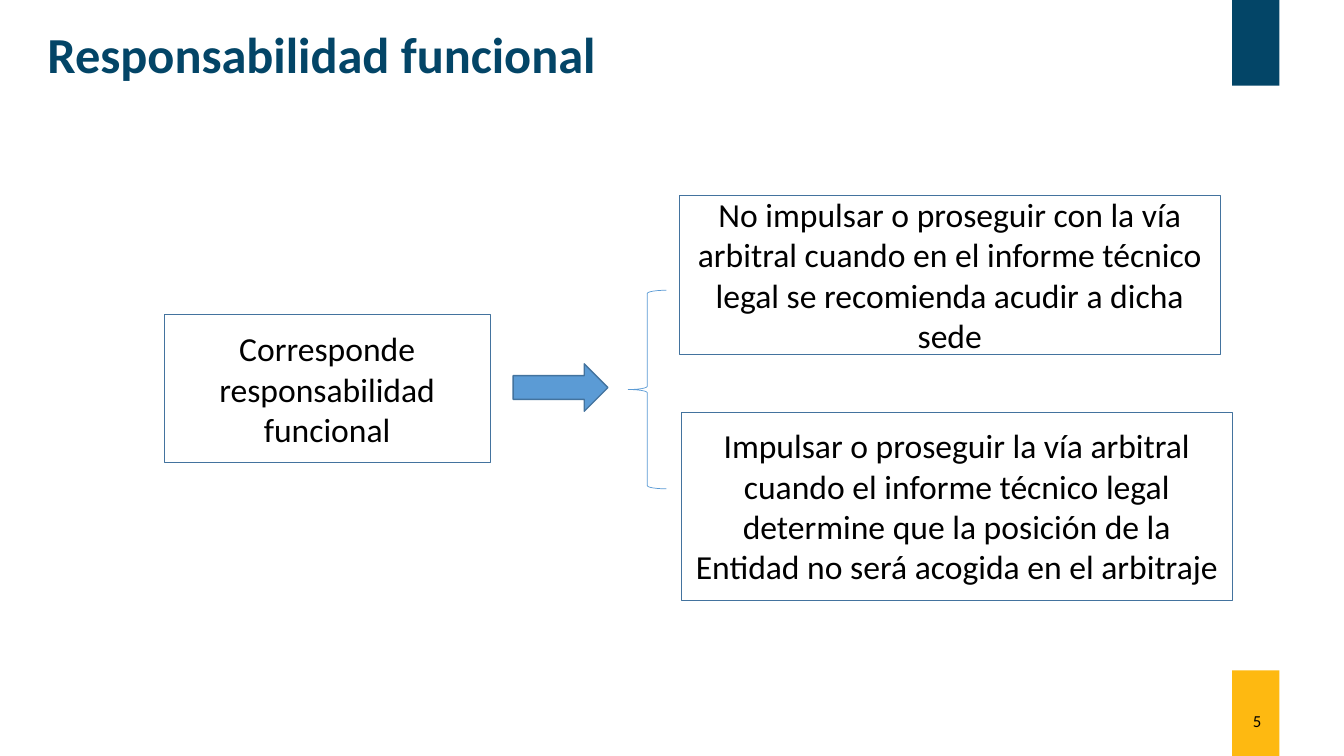
from pptx import Presentation
from pptx.dml.color import RGBColor
from pptx.enum import shapes as sh, text as tx
from pptx.util import Inches, Pt

THEME = {
    "font": "Calibri",
    "ink": "000000", "navy": "034567", "gold": "FEB911",
    "white": "FFFFFF", "blue": "5B9BD5", "edge": "43739E",
    "title": 36, "body": 24, "small": 12,
}

TITLE = "Responsabilidad funcional"
NUMBER = "5"
BOXES = [
    ("Corresponde responsabilidad funcional", (1.63, 3.12, 3.23, 1.47)),
    ("No impulsar o proseguir con la vía arbitral cuando en el informe "
     "técnico legal se recomienda acudir a dicha sede",
     (6.74, 1.94, 5.36, 1.57)),
    ("Impulsar o proseguir la vía arbitral cuando el informe técnico legal "
     "determine que la posición de la Entidad no será acogida en el arbitraje",
     (6.76, 4.09, 5.46, 1.86)),
]
MARKS = [
    ("RIGHT_ARROW", (5.09, 3.61, 0.94, 0.47), "blue", "edge", 1),
    ("LEFT_BRACE", (6.23, 2.88, 0.38, 1.97), None, "blue", 0.5),
]
WIDE, HIGH = 13.33, 7.5
TAB = (12.22, 0.47, 0.85)


def hue(name):
    return RGBColor.from_string(THEME[name])


def write(shape, words, size, ink, align, anchor, bold=False):
    frame = shape.text_frame
    frame.text = words
    look = {"word_wrap": True, "auto_size": tx.MSO_AUTO_SIZE.NONE,
            "vertical_anchor": anchor}
    for key, value in look.items():
        setattr(frame, key, value)
    line = frame.paragraphs[0]
    line.alignment = align
    font = line.runs[0].font
    style = {"name": THEME["font"], "size": Pt(THEME[size]), "bold": bold}
    for key, value in style.items():
        setattr(font, key, value)
    font.color.rgb = hue(ink)


def draw(slide, kind, spot, fill=None, edge=None, width=0):
    shape = slide.shapes.add_shape(
        getattr(sh.MSO_SHAPE, kind), *map(Inches, spot))
    shape.shadow.inherit = False
    if fill:
        shape.fill.solid()
        shape.fill.fore_color.rgb = hue(fill)
    else:
        shape.fill.background()
    if edge:
        shape.line.color.rgb = hue(edge)
        shape.line.width = Pt(width)
    else:
        shape.line.fill.background()
    return shape


def main():
    deck = Presentation()
    deck.slide_width, deck.slide_height = Inches(WIDE), Inches(HIGH)
    slide = deck.slides.add_slide(deck.slide_layouts[5])
    align, anchor = tx.PP_ALIGN, tx.MSO_ANCHOR

    for words, spot in BOXES:
        box = draw(slide, "RECTANGLE", spot, "white", "edge", 0.25)
        write(box, words, "body", "ink", align.CENTER, anchor.MIDDLE)
    for mark in MARKS:
        draw(slide, *mark)

    left, width, height = TAB
    for top, fill in ((HIGH - height, "gold"), (0, "navy")):
        draw(slide, "RECTANGLE", (left, top, width, height), fill)

    number = slide.shapes.add_textbox(*map(Inches, (9.5, 6.95, 3.11, 0.4)))
    write(number, NUMBER, "small", "ink", align.RIGHT, anchor.MIDDLE)

    title = slide.shapes.title
    place = zip(("left", "top", "width", "height"), (0.37, 0.18, 11.44, 0.71))
    for key, value in place:
        setattr(title, key, Inches(value))
    write(title, TITLE, "title", "navy", align.LEFT, anchor.TOP, True)

    deck.save("out.pptx")


if __name__ == "__main__":
    main()
